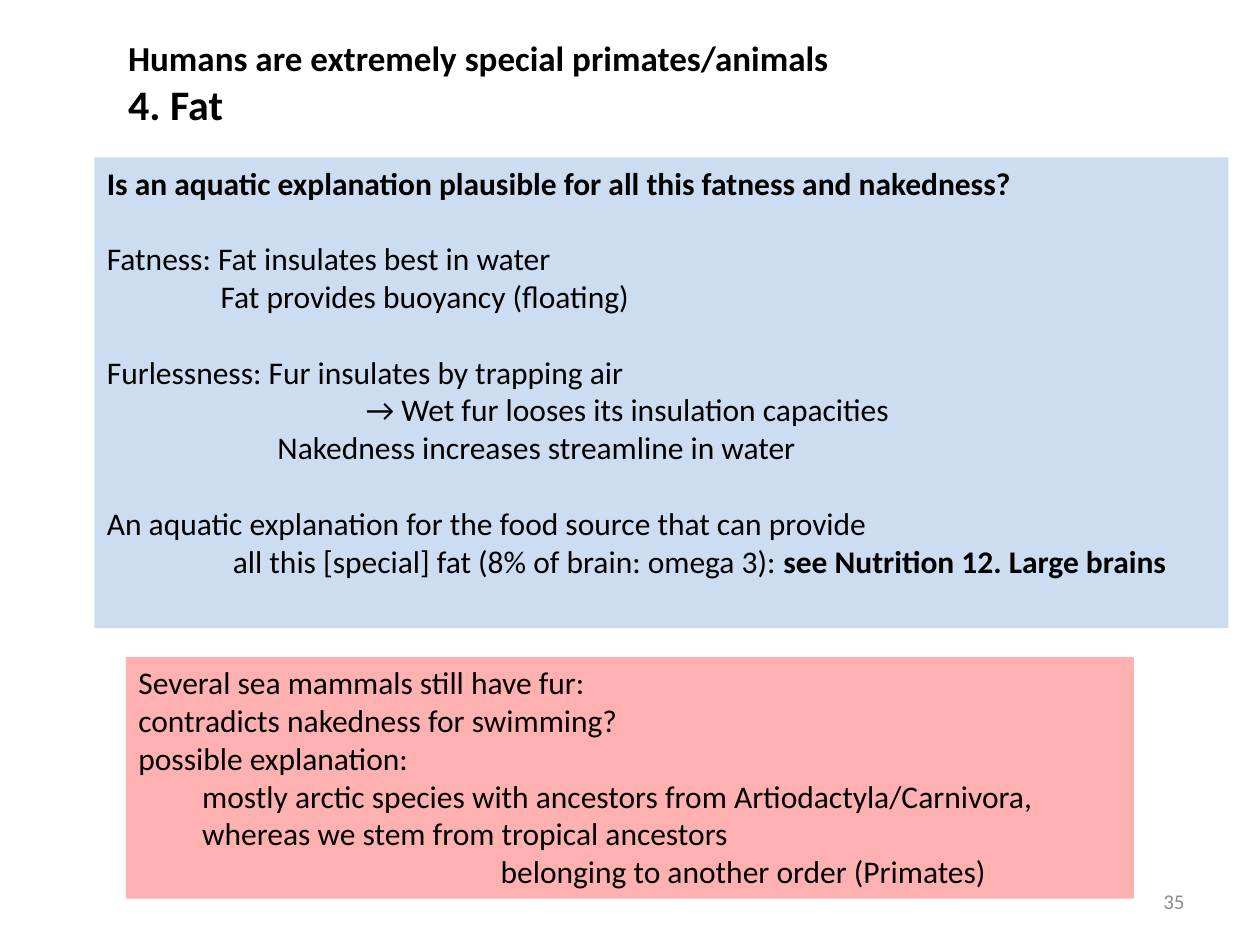
from lxml.etree import SubElement
from pptx import Presentation
from pptx.dml.color import RGBColor
from pptx.enum.shapes import MSO_SHAPE
from pptx.enum.text import MSO_ANCHOR, MSO_AUTO_SIZE, PP_ALIGN
from pptx.oxml.ns import qn
from pptx.util import Pt

LINE = 21.6  # height of one line of panel text


def color(hex_string):
    return RGBColor.from_string(hex_string)


class PageBuilder:
    font_name = "Calibri"
    text_color = "000000"
    text_size = 18

    def __init__(self, page):
        self.page = page

    def style(self, span, size=text_size, bold=False, ink=text_color):
        span.font.name = self.font_name
        span.font.size = Pt(size)
        span.font.bold = bold
        span.font.color.rgb = color(ink)

    def prepare(self, frame, anchor=MSO_ANCHOR.TOP):
        frame.word_wrap = True
        frame.auto_size = MSO_AUTO_SIZE.NONE
        frame.vertical_anchor = anchor

    def title(self, left, top, width, height, lines):
        box = self.page.shapes.title
        box.left, box.top, box.width, box.height = map(Pt, (left, top, width, height))
        frame = box.text_frame
        self.prepare(frame)
        frame.text = "\n".join(text for text, size in lines)
        for para, (text, size) in zip(frame.paragraphs, lines):
            para.alignment = PP_ALIGN.LEFT
            self.style(para.runs[0], size, bold=True)

    def panel(self, left, top, width, height, fill, opacity, lines):
        """Draw a tinted box; each line is (indent, space before, *(text, bold))."""
        box = self.page.shapes.add_shape(
            MSO_SHAPE.RECTANGLE, Pt(left), Pt(top), Pt(width), Pt(height))
        box.shadow.inherit = False
        box.line.fill.background()
        box.fill.solid()
        box.fill.fore_color.rgb = color(fill)
        tint = box.fill._xPr.find(qn("a:solidFill"))[0]
        SubElement(tint, qn("a:alpha"), val=str(opacity * 1000))
        frame = box.text_frame
        self.prepare(frame)
        for number, (indent, before, *parts) in enumerate(lines):
            para = frame.add_paragraph() if number else frame.paragraphs[0]
            para.alignment = PP_ALIGN.LEFT
            para.space_before = Pt(before)
            para._p.get_or_add_pPr().set("marL", str(Pt(indent)))
            for text, bold in parts:
                span = para.add_run()
                span.text = text
                self.style(span, bold=bold)

    def page_number(self, left, top, width, height, text):
        box = self.page.shapes.add_textbox(Pt(left), Pt(top), Pt(width), Pt(height))
        frame = box.text_frame
        self.prepare(frame, MSO_ANCHOR.MIDDLE)
        frame.text = text
        frame.paragraphs[0].alignment = PP_ALIGN.RIGHT
        self.style(frame.paragraphs[0].runs[0], size=12, ink="8C8C8C")


def main():
    deck = Presentation()
    deck.slide_width, deck.slide_height = Pt(720), Pt(540)
    builder = PageBuilder(deck.slides.add_slide(deck.slide_layouts[5]))

    builder.title(66, 17.5, 624, 60.5, [
        ("Humans are extremely special primates/animals", 20),
        ("4. Fat", 24),
    ])
    builder.panel(54, 90, 648, 269, "8EB4E3", 45, [
        (0, 0, ("Is an aquatic explanation plausible for all this fatness and nakedness?", True)),
        (0, LINE, ("Fatness: Fat insulates best in water", False)),
        (65, 0, ("Fat provides buoyancy (floating)", False)),
        (0, LINE, ("Furlessness: Fur insulates by trapping air", False)),
        (148, 0, ("→ Wet fur looses its insulation capacities", False)),
        (97.5, 0, ("Nakedness increases streamline in water", False)),
        (0, LINE, ("An aquatic explanation for the food source that can provide", False)),
        (72, 0, ("all this [special] fat (8% of brain: omega 3): ", False),
         ("see Nutrition 12. Large brains", True)),
    ])
    builder.panel(72, 375.5, 576, 138, "FF0000", 31, [
        (0, 0, ("Several sea mammals still have fur:", False)),
        (0, 0, ("contradicts nakedness for swimming?", False)),
        (0, 0, ("possible explanation:", False)),
        (36.5, 0, ("mostly arctic species with ancestors from Artiodactyla/Carnivora,", False)),
        (36.5, 0, ("whereas we stem from tropical ancestors", False)),
        (207, 0, ("belonging to another order (Primates)", False)),
    ])
    builder.page_number(516, 500.5, 168, 28.75, "35")
    deck.save("out.pptx")


if __name__ == "__main__":
    main()
